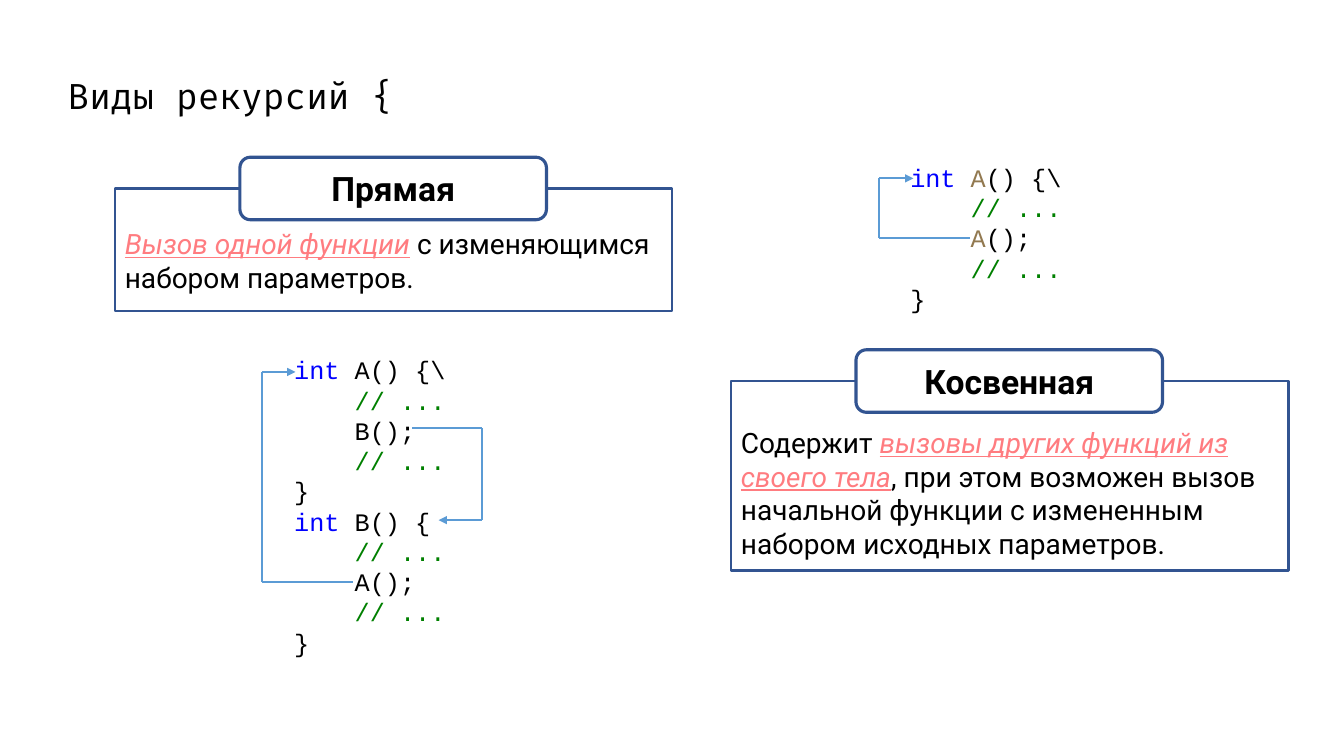
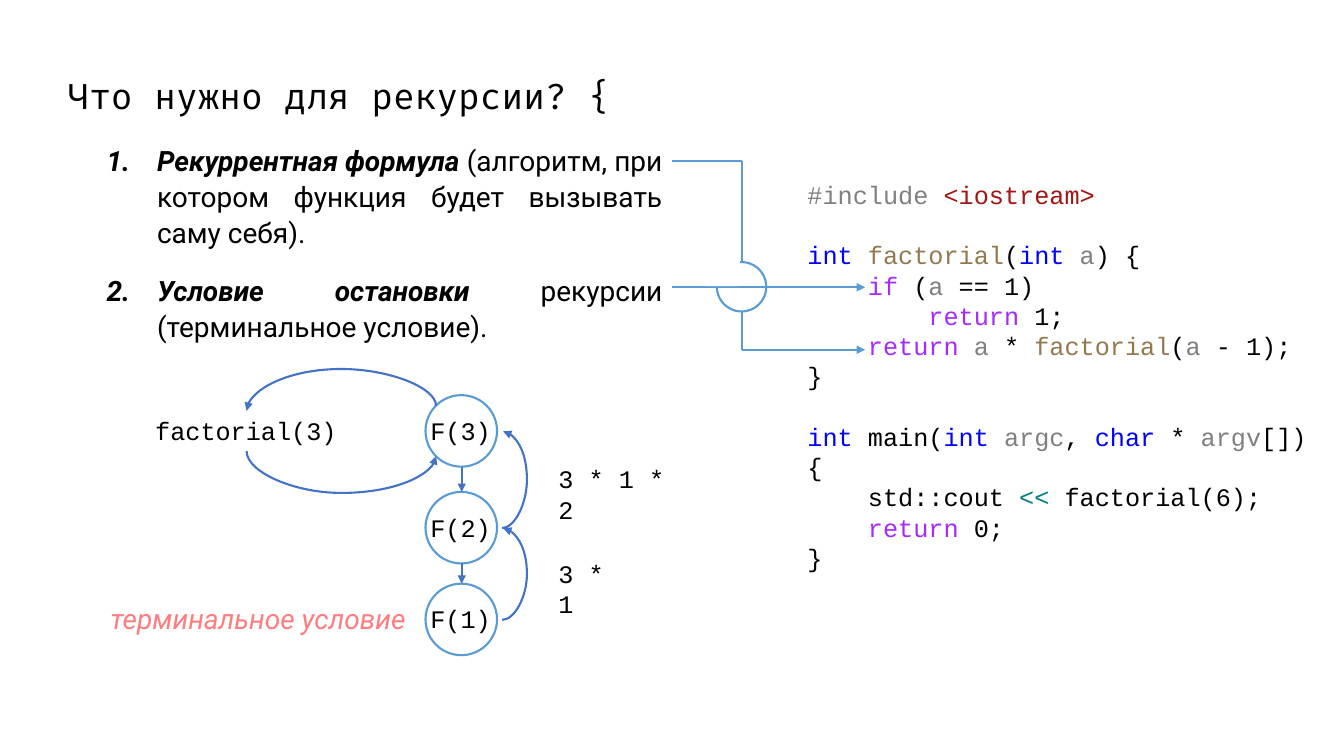
"""Build two slides on recursion: its kinds and its parts."""
from lxml import etree
from pptx import Presentation
from pptx import util as u
from pptx.dml.color import RGBColor
from pptx.enum import shapes, text
from pptx.oxml.ns import qn

PX = 9144
BLACK = RGBColor(0x00, 0x00, 0x00)
WHITE = RGBColor(0xFF, 0xFF, 0xFF)
NAVY = RGBColor(0x32, 0x54, 0x91)
SKY = RGBColor(0x5B, 0x9B, 0xD5)
BLUE = RGBColor(0x44, 0x72, 0xC4)
PINK = RGBColor(0xFF, 0x7C, 0x80)
KEY = RGBColor(0x00, 0x00, 0xFF)
NAME = RGBColor(0x92, 0x79, 0x50)
NOTE = RGBColor(0x00, 0x80, 0x00)
GREY = RGBColor(0x80, 0x80, 0x80)
RED = RGBColor(0xA3, 0x15, 0x15)
FLOW = RGBColor(0xA5, 0x2A, 0xFF)
TEAL = RGBColor(0x00, 0x80, 0x80)
HEAD, BODY, MONO = "Fira Code", "Roboto", "Courier New"
KIND = shapes.MSO_SHAPE
ALIGN = text.PP_ALIGN
ANCHOR = text.MSO_ANCHOR


def px(*nums):
    return [u.Emu(n * PX) for n in nums]


def write(para, runs, font, size):
    for words, color, style in runs:
        run = para.add_run()
        run.text = words
        face = run.font
        face.name, face.size = font, u.Pt(size)
        face.color.rgb = color
        face.bold = "b" in style
        face.italic = "i" in style
        face.underline = "u" in style


def paras(frame, lines):
    for num in range(len(lines)):
        yield frame.add_paragraph() if num else frame.paragraphs[0]


def label(slide, box, lines, font=MONO, size=18):
    frame = slide.shapes.add_textbox(*px(*box)).text_frame
    frame.word_wrap = True
    for para, runs in zip(paras(frame, lines), lines):
        write(para, runs, font, size)


def code(slide, box, lines):
    label(slide, box, [[(words, color, "") for words, color in line]
                       for line in lines])


def steps(slide, box, items):
    frame = slide.shapes.add_textbox(*px(*box)).text_frame
    frame.word_wrap = True
    for num, (para, runs) in enumerate(zip(paras(frame, items), items)):
        para.alignment = ALIGN.JUSTIFY
        para.line_spacing = 1.07
        para.space_before = u.Pt(10 if num else 0)
        para.space_after = u.Pt(6)
        props = para._p.get_or_add_pPr()
        props.set("marL", str(75 * PX))
        props.set("indent", str(-50 * PX))
        etree.SubElement(props, qn("a:buAutoNum"), type="arabicPeriod")
        write(para, runs, BODY, 20)


def shape(slide, kind, box, line=None, width=1.5, fill=None):
    item = slide.shapes.add_shape(kind, *px(*box))
    item.shadow.inherit = False
    if fill is None:
        item.fill.background()
    else:
        item.fill.solid()
        item.fill.fore_color.rgb = fill
    if line is None:
        item.line.fill.background()
    else:
        item.line.color.rgb = line
        item.line.width = u.Pt(width)
    return item


def card(slide, left, top, high, inset, name, runs):
    frame = shape(slide, KIND.RECTANGLE, (left, top, 553, high),
                  NAVY).text_frame
    frame.word_wrap = True
    frame.vertical_anchor = ANCHOR.TOP
    frame.margin_top = px(inset)[0]
    frame.paragraphs[0].alignment = ALIGN.LEFT
    write(frame.paragraphs[0], runs, BODY, 20)
    tab = shape(slide, KIND.ROUNDED_RECTANGLE,
                (left + 124, top - 31, 304, 62), NAVY, 2.25, WHITE)
    tab.text_frame.vertical_anchor = ANCHOR.MIDDLE
    para = tab.text_frame.paragraphs[0]
    para.alignment = ALIGN.CENTER
    write(para, [(name, BLACK, "b")], BODY, 24)


def link(slide, start, end, color, arrow=True,
         kind=shapes.MSO_CONNECTOR.STRAIGHT):
    item = slide.shapes.add_connector(kind, *px(*start, *end))
    item.line.color.rgb = color
    item.line.width = u.Pt(1.5)
    props = item.element.spPr
    if arrow:
        etree.SubElement(props.find(qn("a:ln")), qn("a:tailEnd"),
                         type="triangle")
    etree.SubElement(props, qn("a:effectLst"))
    return item


def route(slide, *points, arrow=True):
    last = len(points) - 2
    for num, (start, end) in enumerate(zip(points, points[1:])):
        link(slide, start, end, SKY, arrow and num == last)


def curve(slide, start, end, bend, turn=0):
    props = link(slide, start, end, BLUE,
                 kind=shapes.MSO_CONNECTOR.CURVE).element.spPr
    if turn:
        props.find(qn("a:xfrm")).set("rot", str(turn * 60000))
    geom = props.find(qn("a:prstGeom"))
    guides = geom.find(qn("a:avLst"))
    if guides is None:
        guides = etree.SubElement(geom, qn("a:avLst"))
    etree.SubElement(guides, qn("a:gd"), name="adj1",
                     fmla=f"val {round(bend * 100000)}")


def page(deck, title):
    slide = deck.slides.add_slide(deck.slide_layouts[5])
    head = slide.shapes.title
    head.left, head.top, head.width, head.height = px(57, 73, 1253, 49)
    head.text_frame.vertical_anchor = ANCHOR.MIDDLE
    para = head.text_frame.paragraphs[0]
    para.alignment = ALIGN.LEFT
    para.line_spacing = 0.9
    write(para, [(title, BLACK, "")], HEAD, 25.2)
    return slide


def kinds(deck):
    slide = page(deck, "Виды рекурсий {")
    card(slide, 114, 187, 122, 38, "Прямая", [
        ("Вызов одной функции", PINK, "iu"),
        (" с изменяющимся набором параметров.", BLACK, "")])
    card(slide, 725, 378, 188, 44, "Косвенная", [
        ("Содержит ", BLACK, ""),
        ("вызовы других функций из своего тела", PINK, "iu"),
        (", при этом возможен вызов начальной функции с измененным "
         "набором исходных параметров.", BLACK, "")])
    dots = [("    ", BLACK), ("// ...", NOTE)]
    close = [("}", BLACK)]
    code(slide, (893, 156, 217, 162), [
        [("int ", KEY), ("A", NAME), ("() {\\", BLACK)],
        dots,
        [("    ", BLACK), ("A", NAME), ("();", BLACK)],
        dots, close])
    pair = []
    for start, call in ((" A() {\\", "    B();"), (" B() {", "    A();")):
        pair += [[("int", KEY), (start, BLACK)], dots, [(call, BLACK)],
                 dots, close]
    code(slide, (282, 347, 217, 313), pair)
    route(slide, (409, 425), (478, 425), (478, 516), (435, 516))
    route(slide, (350, 577), (260, 577), (260, 369), (293, 369))
    route(slide, (962, 236), (872, 236), (872, 177), (906, 177))


def parts(deck):
    slide = page(deck, "Что нужно для рекурсии? {")
    steps(slide, (71, 135, 596, 480), [
        [("Рекуррентная формула ", BLACK, "bi"),
         ("(алгоритм, при котором функция будет вызывать саму себя).",
          BLACK, "")],
        [("Условие остановки ", BLACK, "bi"),
         ("рекурсии (терминальное условие).", BLACK, "")]])
    code(slide, (791, 173, 518, 404), [
        [("#include ", GREY), ("<iostream>", RED)],
        [(" ", BLACK)],
        [("int ", KEY), ("factorial", NAME), ("(", BLACK), ("int ", KEY),
         ("a", GREY), (") {", BLACK)],
        [("    ", BLACK), ("if", FLOW), (" (", BLACK), ("a", GREY),
         (" == 1)", BLACK)],
        [("        ", BLACK), ("return", FLOW), (" 1;", BLACK)],
        [("    ", BLACK), ("return ", FLOW), ("a", GREY), (" * ", BLACK),
         ("factorial", NAME), ("(", BLACK), ("a", GREY),
         (" - 1);", BLACK)],
        [("}", BLACK)],
        [(" ", BLACK)],
        [("int", KEY), (" main(", BLACK), ("int ", KEY), ("argc", GREY),
         (", ", BLACK), ("char", KEY), (" * ", BLACK), ("argv", GREY),
         ("[])", BLACK)],
        [("{", BLACK)],
        [("    std::cout ", BLACK), ("<<", TEAL),
         (" factorial(6);", BLACK)],
        [("    ", BLACK), ("return ", FLOW), ("0;", BLACK)],
        [("}", BLACK)]])

    route(slide, (667, 285), (858, 285))
    route(slide, (667, 160), (736, 160), (736, 260), arrow=False)
    route(slide, (736, 309), (736, 347), (858, 347))
    shape(slide, KIND.OVAL, (711, 260, 49, 49), SKY)
    shape(slide, KIND.RECTANGLE, (700, 258, 34, 26), fill=WHITE)

    tops = (392, 488, 579)
    for num, top in zip((3, 2, 1), tops):
        shape(slide, KIND.OVAL, (422, top, 71, 71), SKY)
        code(slide, (417, top + 15, 81, 40), [[(f"F({num})", BLACK)]])
    for top, low in zip(tops, tops[1:]):
        link(slide, (458, top + 71), (458, low), BLUE)
        curve(slide, (498, low + 36), (499, top + 36), 25)
    curve(slide, (341, 356), (336, 544), 8.3, 270)
    curve(slide, (341, 499), (336, 311), -7.3, 270)

    code(slide, (144, 407, 201, 40), [[("factorial(3)", BLACK)]])
    label(slide, (100, 592, 317, 44),
          [[("терминальное условие", PINK, "i")]], BODY, 20)
    code(slide, (544, 549, 94, 40), [[("3 * 1", BLACK)]])
    code(slide, (544, 455, 153, 40), [[("3 * 1 * 2", BLACK)]])


def main():
    deck = Presentation()
    deck.slide_width, deck.slide_height = px(1333, 750)
    kinds(deck)
    parts(deck)
    deck.save("out.pptx")


if __name__ == "__main__":
    main()
